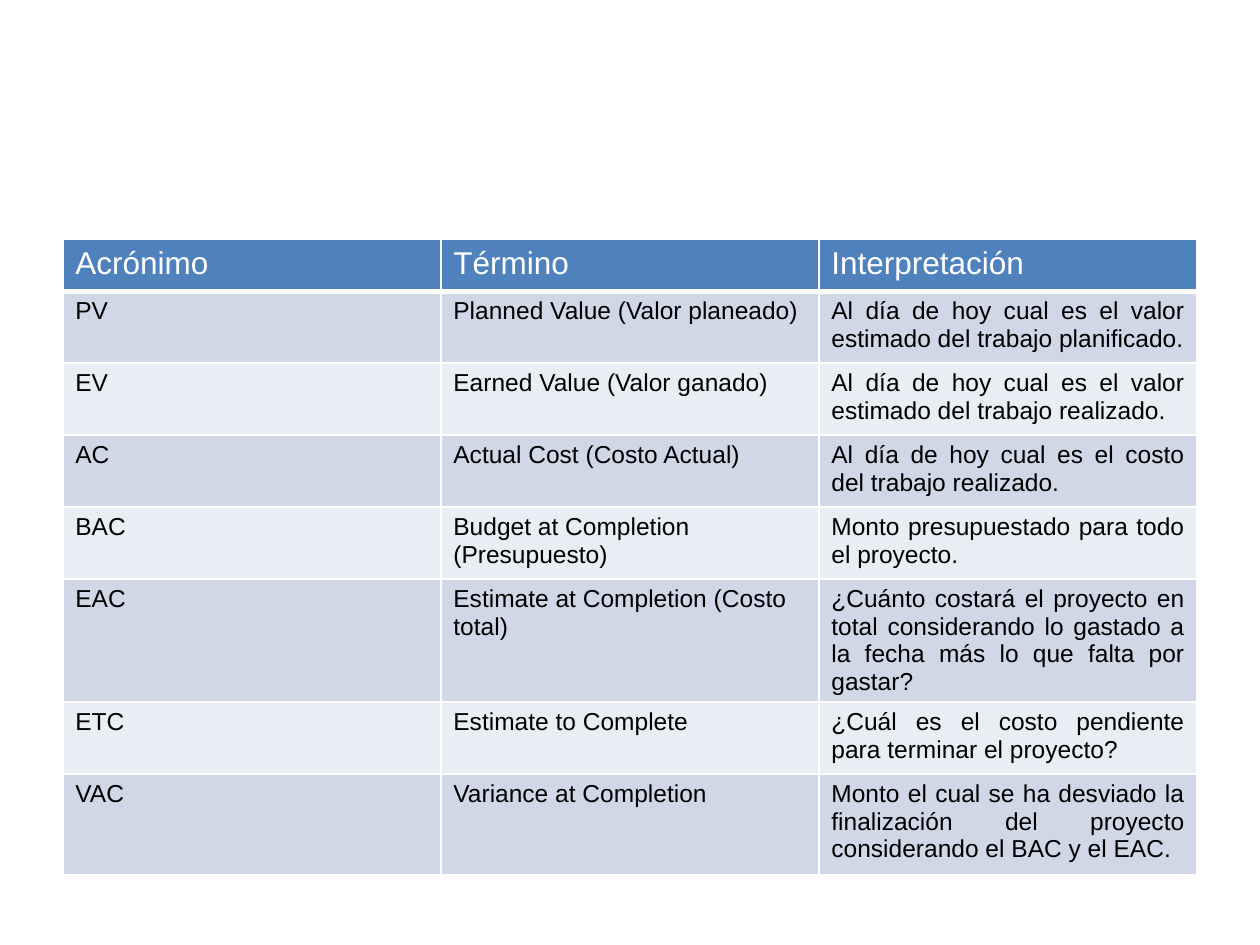
import pptx
import pptx.dml.color
import pptx.enum.text
import pptx.oxml.ns
import pptx.util
import lxml.etree

Cm = pptx.util.Cm
Pt = pptx.util.Pt

HEADINGS = ("Acrónimo", "Término", "Interpretación")
TERMS = (
    ("PV", "Planned Value (Valor planeado)",
     "Al día de hoy cual es el valor estimado del trabajo planificado."),
    ("EV", "Earned Value (Valor ganado)",
     "Al día de hoy cual es el valor estimado del trabajo realizado."),
    ("AC", "Actual Cost (Costo Actual)",
     "Al día de hoy cual es el costo del trabajo realizado."),
    ("BAC", "Budget at Completion (Presupuesto)",
     "Monto presupuestado para todo el proyecto."),
    ("EAC", "Estimate at Completion (Costo total)",
     "¿Cuánto costará el proyecto en total considerando lo gastado a la fecha "
     "más lo que falta por gastar?"),
    ("ETC", "Estimate to Complete",
     "¿Cuál es el costo pendiente para terminar el proyecto?"),
    ("VAC", "Variance at Completion",
     "Monto el cual se ha desviado la finalización del proyecto considerando "
     "el BAC y el EAC."),
)
WHITE = "FFFFFF"
BLACK = "000000"
HEADING_FILL = "4F81BD"
BAND_FILLS = ("D0D8E8", "E9EDF4")
HEADING_HEIGHT, TERM_HEIGHT, LAST_HEIGHT = Cm(1.04), Cm(1.45), Cm(2.03)


def set_color(color_format, color):
    color_format.rgb = pptx.dml.color.RGBColor.from_string(color)


def set_borders(cell, color, bottom_width):
    properties = cell._tc.get_or_add_tcPr()
    widths = {"lnL": 1, "lnR": 1, "lnT": 1, "lnB": bottom_width}
    for side, width in widths.items():
        line = lxml.etree.SubElement(
            properties, pptx.oxml.ns.qn(f"a:{side}"), w=str(Pt(width)))
        fill = lxml.etree.SubElement(line, pptx.oxml.ns.qn("a:solidFill"))
        lxml.etree.SubElement(fill, pptx.oxml.ns.qn("a:srgbClr"), val=color)


def format_cell(cell, text, size, text_color, fill_color, bottom_width=1):
    set_borders(cell, WHITE, bottom_width)
    cell.fill.solid()
    set_color(cell.fill.fore_color, fill_color)
    cell.margin_left = cell.margin_right = Cm(0.25)
    cell.margin_top = cell.margin_bottom = Cm(0.13)
    cell.text_frame.text = text
    font = cell.text_frame.paragraphs[0].runs[0].font
    font.name = "Arial"
    font.size = Pt(size)
    font.bold = False
    set_color(font.color, text_color)


def add_terms_table(slide, left, top, width):
    heights = ([HEADING_HEIGHT] + [TERM_HEIGHT] * (len(TERMS) - 1)
               + [LAST_HEIGHT])
    table = slide.shapes.add_table(
        len(heights), len(HEADINGS), left, top, width, sum(heights)).table
    for row, height in zip(table.rows, heights):
        row.height = height
    for column, heading in enumerate(HEADINGS):
        format_cell(table.cell(0, column), heading, 18, WHITE, HEADING_FILL, 3)
    for row, term in enumerate(TERMS, start=1):
        fill_color = BAND_FILLS[(row - 1) % len(BAND_FILLS)]
        for column, text in enumerate(term):
            format_cell(table.cell(row, column), text, 14, BLACK, fill_color)
        interpretation = table.cell(row, len(HEADINGS) - 1).text_frame
        interpretation.paragraphs[0].alignment = pptx.enum.text.PP_ALIGN.JUSTIFY


def main():
    presentation = pptx.Presentation()
    presentation.slide_width = Cm(25.4)
    presentation.slide_height = Cm(19.05)
    slide = presentation.slides.add_slide(presentation.slide_layouts[6])
    add_terms_table(slide, Cm(1.27), Cm(4.83), Cm(22.86))
    presentation.save("out.pptx")


if __name__ == "__main__":
    main()
